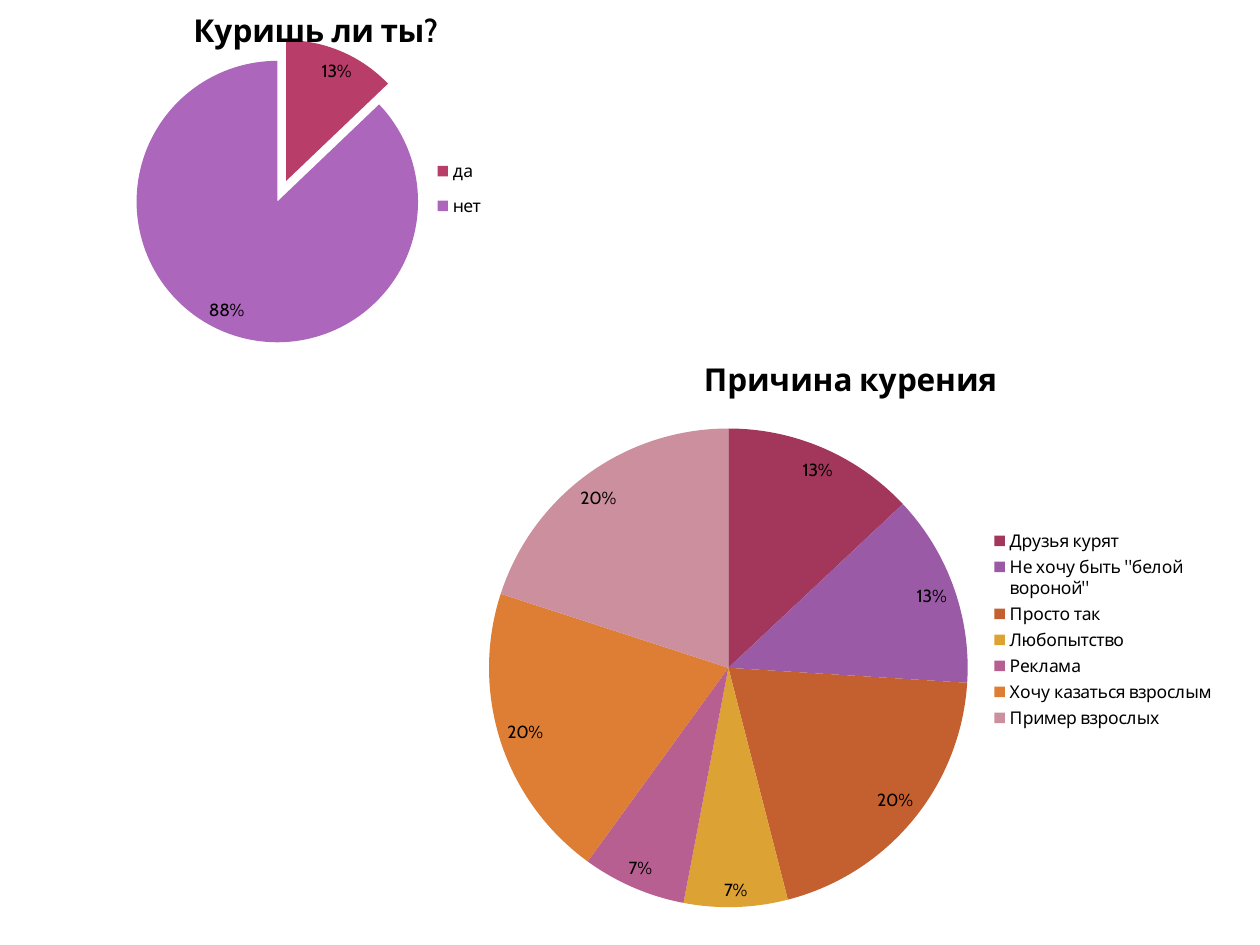
from lxml import etree
from pptx import Presentation
from pptx.chart.data import CategoryChartData
from pptx.dml.color import RGBColor
from pptx.enum.chart import XL_CHART_TYPE, XL_LEGEND_POSITION
from pptx.oxml.ns import qn
from pptx.util import Pt

PIE = XL_CHART_TYPE.PIE
RIGHT = XL_LEGEND_POSITION.RIGHT
PX = 914400 / 126
FONT = "Cabin"
HEX = {
    "black": "000000", "rose": "B83D68", "violet": "AC66BB",
    "wine": "A2365B", "plum": "9A5AA5", "rust": "C45F2F", "gold": "DDA234",
    "pink": "B85F91", "orange": "DE7E35", "dusty": "CB8F9D",
}


def place(node, box):
    """Fix a chart part at fractions of the chart: x, y and, if given, w, h."""
    for old in node.findall(qn("c:layout")):
        node.remove(old)
    layout = etree.Element(qn("c:layout"))
    manual = etree.SubElement(layout, qn("c:manualLayout"))
    if node.tag == qn("c:plotArea"):
        etree.SubElement(manual, qn("c:layoutTarget")).set("val", "inner")
    for key in ("xMode", "yMode"):
        etree.SubElement(manual, qn("c:" + key)).set("val", "edge")
    for key, val in zip("xywh", box):
        etree.SubElement(manual, qn("c:" + key)).set("val", str(val))
    after = node.find(qn("c:overlay"))
    if after is None:
        node.insert(0, layout)
    else:
        after.addprevious(layout)


def style(font, size, bold):
    for key, val in {"name": FONT, "size": Pt(size), "bold": bold}.items():
        setattr(font, key, val)
    font.color.rgb = RGBColor.from_string(HEX["black"])


# The rounded shares of the first pie add up to 101, so it labels its values.
pies = [
    {
        "title": "Куришь ли ты?",
        "at": (-44, 3, 724, 554),
        "plot": (0.24, 0, 0.42, 0.68),
        "head": (0.32, 0),
        "legend": (0.65, 0.26, 0.09, 0.15),
        "burst": 8,
        "label": {"show_value": True, "show_percentage": False,
                  "number_format": '0"%"'},
        "parts": [("да", 13, "rose"), ("нет", 88, "violet")],
    },
    {
        "title": "Причина курения",
        "at": (471, 334, 757, 591),
        "plot": (0.02, 0.16, 0.64, 0.81),
        "head": (0.3, 0.03),
        "label": {"show_value": False, "show_percentage": True,
                  "number_format": "0%"},
        "parts": [
            ("Друзья курят", 13, "wine"),
            ('Не хочу быть "белой вороной"', 13, "plum"),
            ("Просто так", 20, "rust"),
            ("Любопытство", 7, "gold"),
            ("Реклама", 7, "pink"),
            ("Хочу казаться взрослым", 20, "orange"),
            ("Пример взрослых", 20, "dusty"),
        ],
    },
]

prs = Presentation()
prs.slide_width = round(1260 * PX)
prs.slide_height = round(945 * PX)
slide = prs.slides.add_slide(prs.slide_layouts[6])

for pie in pies:
    names, vals, hues = zip(*pie["parts"])
    data = CategoryChartData()
    data.categories = names
    data.add_series("Series 1", vals)
    box = [round(n * PX) for n in pie["at"]]
    chart = slide.shapes.add_chart(PIE, *box, data).chart
    style(chart.font, 10, False)

    chart.has_title = True
    head = chart.chart_title
    head.text_frame.text = pie["title"]
    style(head.text_frame.paragraphs[0].runs[0].font, 18, True)

    chart.has_legend = True
    legend = chart.legend
    legend.position = RIGHT
    legend.include_in_layout = False
    style(legend.font, 10, False)

    plot = chart.plots[0]
    plot.vary_by_categories = True
    plot.has_data_labels = True
    labels = plot.data_labels
    for key, val in pie["label"].items():
        setattr(labels, key, val)
    labels.number_format_is_linked = False
    style(labels.font, 10, False)

    series = plot.series[0]
    for i, hue in enumerate(hues):
        fill = series.points[i].format.fill
        fill.solid()
        fill.fore_color.rgb = RGBColor.from_string(HEX[hue])
    if "burst" in pie:
        burst = etree.Element(qn("c:explosion"))
        burst.set("val", str(pie["burst"]))
        series._element.find(qn("c:dPt")).addprevious(burst)

    root = chart._chartSpace.chart
    for key, tag in {"plot": "plotArea", "head": "title", "legend": "legend"}.items():
        if key in pie:
            place(root.find(qn("c:" + tag)), pie[key])

prs.save("out.pptx")
